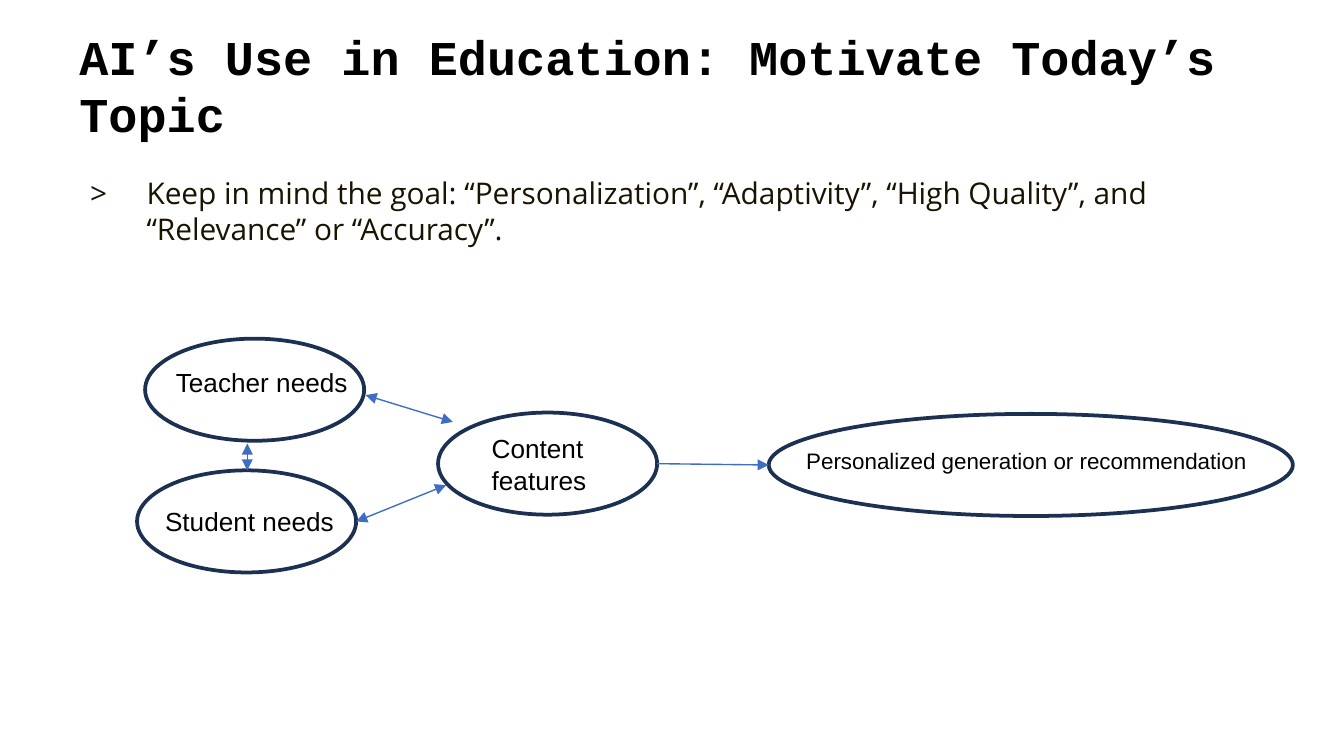
from lxml import etree
from pptx import Presentation
from pptx.dml.color import RGBColor
from pptx.enum.shapes import MSO_CONNECTOR, MSO_SHAPE
from pptx.enum.text import MSO_ANCHOR, MSO_AUTO_SIZE, PP_ALIGN
from pptx.oxml.ns import qn
from pptx.util import Inches, Pt

COLORS = {"text": "000000", "body": "191300", "outline": "1C3052", "arrow": "3E6EC2"}
SLIDE_WIDTH = 10
SLIDE_HEIGHT = SLIDE_WIDTH * 9 / 16
NODE_WIDTH, NODE_HEIGHT = 1.63, 0.76


def color(name):
    """Return the named palette colour."""
    return RGBColor.from_string(COLORS[name])


def place(shape, box):
    """Move a shape to a box of left, top, width and height in inches."""
    shape.left, shape.top, shape.width, shape.height = map(Inches, box)


def set_font(paragraph, name, size, color_name, bold=False):
    """Set the font of a whole paragraph."""
    font = paragraph.font
    font.name, font.size, font.bold = name, Pt(size), bold
    font.color.rgb = color(color_name)


def add_title(slide, box, text):
    """Fill the title placeholder."""
    title = slide.shapes.title
    place(title, box)
    frame = title.text_frame
    frame.text = text
    frame.auto_size = MSO_AUTO_SIZE.NONE
    frame.vertical_anchor = MSO_ANCHOR.BOTTOM
    paragraph = frame.paragraphs[0]
    paragraph.alignment = PP_ALIGN.LEFT
    paragraph.line_spacing = 0.98
    set_font(paragraph, "Courier New", 26, "text", bold=True)


def add_goal(slide, box, text):
    """Fill the body placeholder with one bulleted paragraph."""
    body = slide.placeholders[1]
    place(body, box)
    frame = body.text_frame
    frame.text = text
    frame.auto_size = MSO_AUTO_SIZE.NONE
    paragraph = frame.paragraphs[0]
    paragraph.line_spacing = 1.0
    paragraph.space_before = Pt(0)
    properties = paragraph._p.get_or_add_pPr()
    properties.set("marL", str(Inches(0.5)))
    properties.set("indent", str(Inches(-0.42)))
    bullet_color = etree.SubElement(properties, qn("a:buClr"))
    etree.SubElement(bullet_color, qn("a:srgbClr"), val=COLORS["body"])
    etree.SubElement(properties, qn("a:buFont"), typeface="Open Sans")
    etree.SubElement(properties, qn("a:buChar"), char=">")
    set_font(paragraph, "Open Sans", 16, "body")


def add_node(slide, box, label_box, text, size=14):
    """Draw an outlined ellipse and a label placed relative to it."""
    left, top, width, height = box
    ellipse = slide.shapes.add_shape(MSO_SHAPE.OVAL, *map(Inches, box))
    ellipse.shadow.inherit = False
    ellipse.fill.background()
    ellipse.line.color.rgb = color("outline")
    ellipse.line.width = Pt(2)
    x, y, label_width, label_height = label_box
    label = slide.shapes.add_textbox(
        Inches(left + x), Inches(top + y), Inches(label_width), Inches(label_height))
    frame = label.text_frame
    frame.word_wrap = True
    frame.auto_size = MSO_AUTO_SIZE.SHAPE_TO_FIT_TEXT
    frame.text = text
    set_font(frame.paragraphs[0], "Arial", size, "text")


def add_arrow(slide, start, end, both_ways=True):
    """Draw a thin arrow, with heads at both ends unless told otherwise."""
    arrow = slide.shapes.add_connector(
        MSO_CONNECTOR.STRAIGHT, *map(Inches, (*start, *end)))
    arrow.line.color.rgb = color("arrow")
    arrow.line.width = Pt(0.75)
    line = arrow.line._get_or_add_ln()
    for tag in ("a:headEnd", "a:tailEnd") if both_ways else ("a:tailEnd",):
        etree.SubElement(line, qn(tag), type="triangle")
    etree.SubElement(arrow._element.spPr, qn("a:effectLst"))


def add_diagram(slide, box):
    """Draw the needs, features and result nodes with their arrows inside a box."""
    left, top, width, height = box
    result_width = 3.9
    nodes = [
        (0.06, 0, NODE_WIDTH, (0.13, 0.16, 1.51, 0.34), "Teacher needs", 14),
        (0, height - NODE_HEIGHT, NODE_WIDTH, (0.11, 0.21, 1.46, 0.34), "Student needs", 14),
        (2.24, 0.55, NODE_WIDTH, (0.3, 0.1, 1.22, 0.57), "Content features", 14),
        (width - result_width, 0.56, result_width, (0.18, 0.2, 3.55, 0.3),
         "Personalized generation or recommendation", 12),
    ]
    for x, y, node_width, label_box, text, size in nodes:
        add_node(slide, (left + x, top + y, node_width, NODE_HEIGHT), label_box, text, size)
    arrows = [
        ((1.7, 0.42), (2.35, 0.62), True),
        ((1.63, 1.36), (2.3, 1.09), True),
        ((0.82, 0.98), (0.82, 0.78), True),
        ((3.87, 0.93), (4.7, 0.94), False),
    ]
    for (x1, y1), (x2, y2), both_ways in arrows:
        add_arrow(slide, (left + x1, top + y1), (left + x2, top + y2), both_ways)


def main():
    """Build and save the slide."""
    presentation = Presentation()
    presentation.slide_width = Inches(SLIDE_WIDTH)
    presentation.slide_height = Inches(SLIDE_HEIGHT)
    slide = presentation.slides.add_slide(presentation.slide_layouts[1])
    add_title(slide, (0.49, 0.03, 8.96, 1.09), "AI’s Use in Education: Motivate Today’s Topic")
    add_goal(slide, (0.49, 1.25, 8.96, 0.81),
             "Keep in mind the goal: “Personalization”, “Adaptivity”, “High Quality”, "
             "and “Relevance” or “Accuracy”.")
    add_diagram(slide, (1.02, 2.52, 8.6, 1.74))
    presentation.save("out.pptx")


if __name__ == "__main__":
    main()
